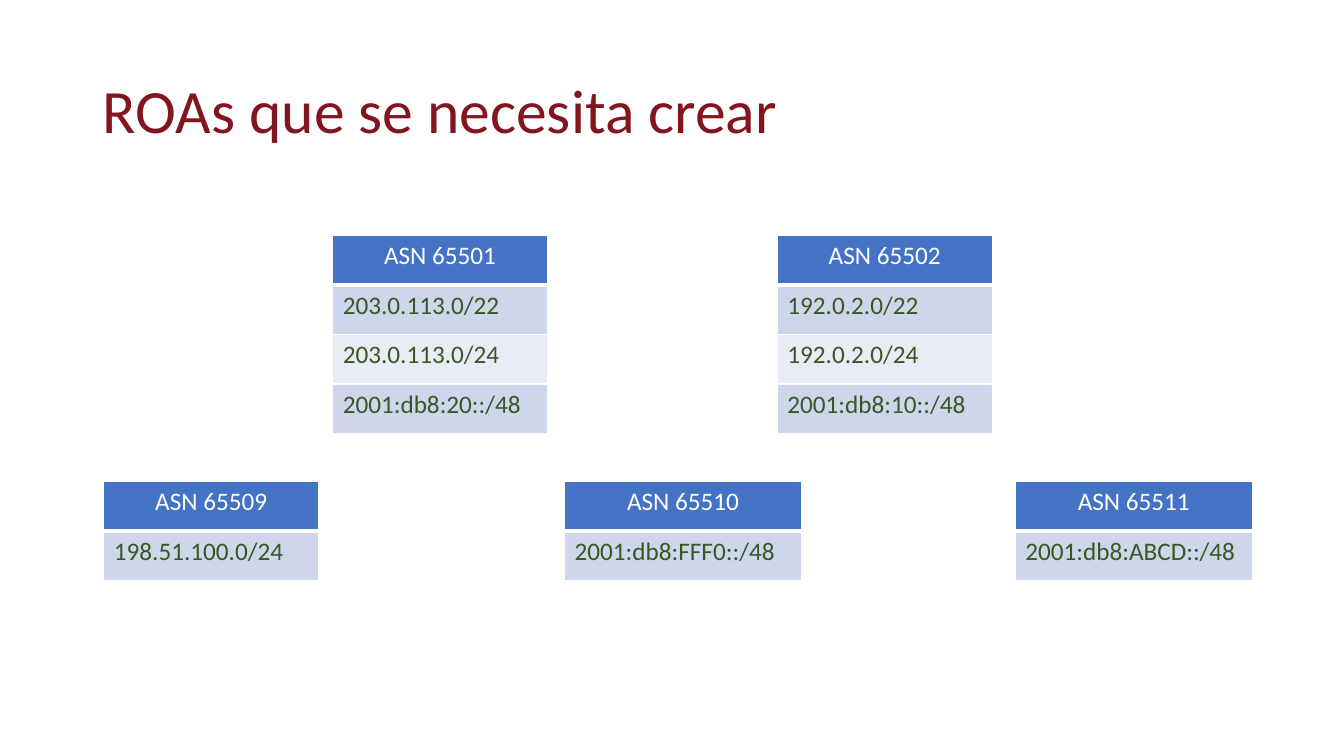
from dataclasses import dataclass

from lxml import etree
from pptx import Presentation
from pptx.dml.color import RGBColor
from pptx.enum.text import MSO_ANCHOR, PP_ALIGN
from pptx.oxml.ns import qn
from pptx.util import Inches, Pt

LEFT, CENTER = PP_ALIGN.LEFT, PP_ALIGN.CENTER
MIDDLE = MSO_ANCHOR.MIDDLE

FONT = "Calibri"
TITLE_COLOR = "82151E"
HEADER_FILL = "4472C4"
BAND_FILLS = ("CFD5EA", "E9EBF5")
PREFIX_COLOR = "385723"
WHITE = "FFFFFF"

ROW_HEIGHT = 0.49
UPPER_TOP, LOWER_TOP = 2.34, 4.78
NARROW, WIDE = 2.13, 2.35


@dataclass
class RoaTable:
    left: float
    top: float
    width: float
    asn: str
    prefixes: tuple[str, ...]


ROA_TABLES = [
    RoaTable(3.3, UPPER_TOP, NARROW, "ASN 65501",
             ("203.0.113.0/22", "203.0.113.0/24", "2001:db8:20::/48")),
    RoaTable(5.6, LOWER_TOP, WIDE, "ASN 65510", ("2001:db8:FFF0::/48",)),
    RoaTable(1.03, LOWER_TOP, NARROW, "ASN 65509", ("198.51.100.0/24",)),
    RoaTable(7.71, UPPER_TOP, NARROW, "ASN 65502",
             ("192.0.2.0/22", "192.0.2.0/24", "2001:db8:10::/48")),
    RoaTable(10.07, LOWER_TOP, WIDE, "ASN 65511", ("2001:db8:ABCD::/48",)),
]


def rgb(color: str) -> RGBColor:
    return RGBColor.from_string(color)


def write(p, text: str, size: float, color: str, align) -> None:
    p.alignment = align
    r = p.add_run()
    r.text = text
    r.font.name = FONT
    r.font.size = Pt(size)
    r.font.bold = False
    r.font.color.rgb = rgb(color)


def add_borders(cell, bottom: float) -> None:
    """Draw white cell borders, 1 pt wide except for the bottom one."""
    tc_pr = cell._tc.get_or_add_tcPr()
    for side, width in (("L", 1), ("R", 1), ("T", 1), ("B", bottom)):
        ln = etree.SubElement(tc_pr, qn(f"a:ln{side}"), w=str(Pt(width)))
        fill = etree.SubElement(ln, qn("a:solidFill"))
        etree.SubElement(fill, qn("a:srgbClr"), val=WHITE)


def add_roa_table(s, roa: RoaTable) -> None:
    rows = (roa.asn, *roa.prefixes)
    table = s.shapes.add_table(
        len(rows), 1, Inches(roa.left), Inches(roa.top),
        Inches(roa.width), Inches(ROW_HEIGHT * len(rows))).table
    for i, text in enumerate(rows):
        is_header = i == 0
        cell = table.cell(i, 0)
        add_borders(cell, 3 if is_header else 1)
        cell.fill.solid()
        cell.fill.fore_color.rgb = rgb(
            HEADER_FILL if is_header else BAND_FILLS[(i - 1) % 2])
        write(cell.text_frame.paragraphs[0], text, 18,
              WHITE if is_header else PREFIX_COLOR,
              CENTER if is_header else LEFT)


def add_title(s, text: str) -> None:
    sp = s.shapes.title
    sp.left, sp.top = Inches(0.92), Inches(0.4)
    sp.width, sp.height = Inches(11.5), Inches(1.45)
    tf = sp.text_frame
    tf.vertical_anchor = MIDDLE
    p = tf.paragraphs[0]
    p.line_spacing = 0.9
    write(p, text, 44, TITLE_COLOR, LEFT)


def main() -> None:
    prs = Presentation()
    prs.slide_width, prs.slide_height = Inches(13.33), Inches(7.5)
    s = prs.slides.add_slide(prs.slide_layouts[5])
    add_title(s, "ROAs que se necesita crear")
    for roa in ROA_TABLES:
        add_roa_table(s, roa)
    prs.save("out.pptx")


if __name__ == "__main__":
    main()
